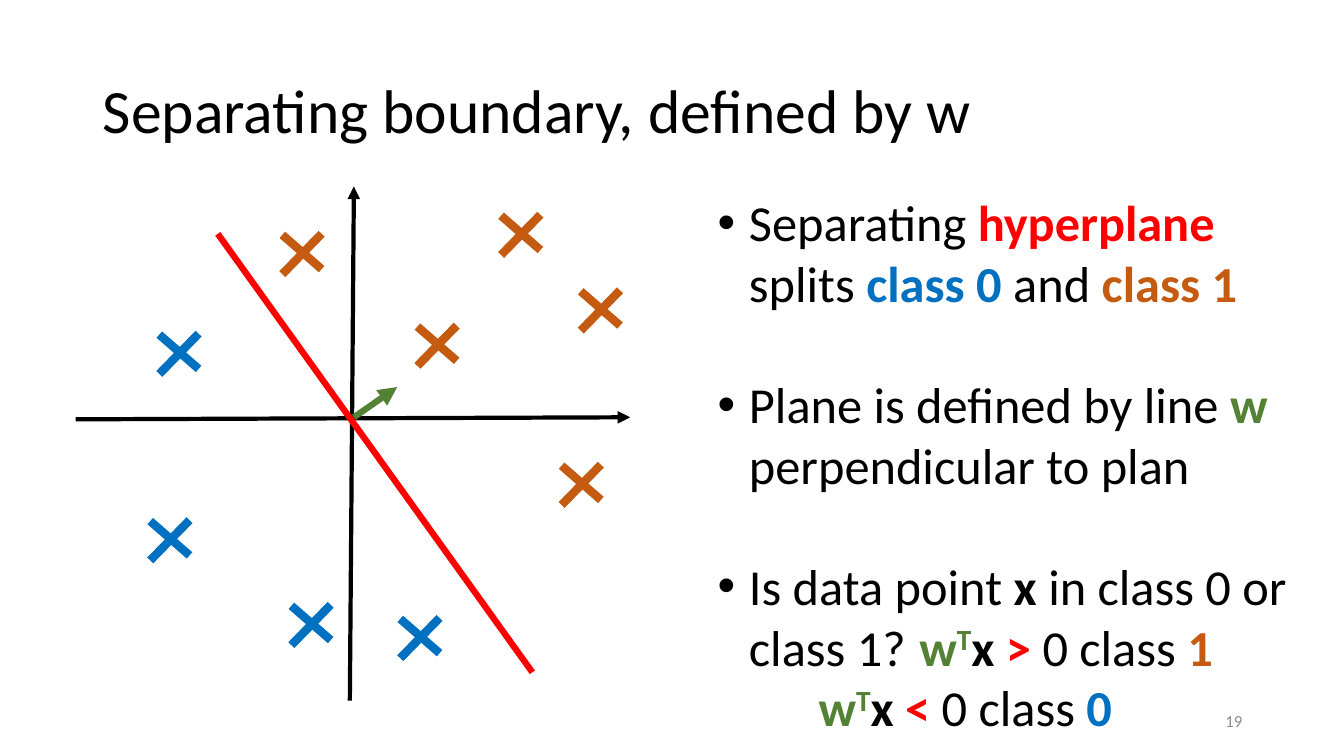
"""Build a slide on the line that splits two classes."""
from dataclasses import dataclass

from lxml import etree
from pptx import Presentation
from pptx.dml.color import RGBColor
from pptx.enum import shapes, text
from pptx.oxml.ns import qn
from pptx.util import Inches, Pt

BLACK, RED, BLUE = "000000", "FF0000", "0070C0"
ORANGE, GREEN, GRAY = "C55A11", "548235", "8C8C8C"
FONT = "Calibri"


@dataclass(frozen=True)
class Line:
    x1: float
    y1: float
    x2: float
    y2: float
    color: str
    width: float
    arrow: bool = False


@dataclass(frozen=True)
class Cross:
    left: float
    top: float
    color: str


@dataclass(frozen=True)
class Span:
    words: str
    color: str = BLACK
    bold: bool = False
    raised: bool = False


AXES = [
    Line(3.47, 6.95, 3.51, 1.85, BLACK, 3, True),
    Line(0.75, 4.16, 6.25, 4.14, BLACK, 3, True),
]
PLANE = Line(2.16, 2.32, 5.28, 6.67, RED, 4.5)
NORMAL = Line(3.51, 4.14, 3.94, 3.84, GREEN, 4.5, True)

POINTS = [
    Cross(4.14, 3.23, ORANGE), Cross(2.8, 2.32, ORANGE),
    Cross(5.76, 2.88, ORANGE), Cross(5.57, 4.61, ORANGE),
    Cross(4.97, 2.13, ORANGE),
    Cross(1.58, 3.31, BLUE), Cross(1.49, 5.16, BLUE),
    Cross(2.89, 6, BLUE), Cross(3.97, 6.13, BLUE),
]


def rule(sign: str, label: str, color: str) -> list[Span]:
    """Give the spans of one class test."""
    return [
        Span("w", GREEN, True), Span("T", GREEN, True, True),
        Span("x ", bold=True), Span(sign, RED, True),
        Span(" 0 class "), Span(label, color, True),
    ]


BULLETS = [
    [Span("Separating "), Span("hyperplane", RED, True), Span(" splits "),
     Span("class 0", BLUE, True), Span(" and "), Span("class 1", ORANGE, True)],
    [Span("Plane is defined by line "), Span("w ", GREEN, True),
     Span("perpendicular to plan")],
    [Span("Is data point "), Span("x", bold=True),
     Span(" in class 0 or class 1?\t"), *rule(">", "1", ORANGE),
     Span("\n\t\t"), *rule("<", "0", BLUE)],
]


def paint(color: str) -> RGBColor:
    return RGBColor.from_string(color)


def write(para, words: str, *, size: float, color: str = BLACK,
          bold: bool = False, raised: bool = False) -> None:
    if words.startswith("\n"):
        para.add_line_break()
        words = words[1:]
    run = para.add_run()
    run.text = words
    font = run.font
    font.name, font.size, font.bold = FONT, Pt(size), bold
    font.color.rgb = paint(color)
    if raised:
        run._r.get_or_add_rPr().set("baseline", "30000")


def draw_line(slide, line: Line) -> None:
    ends = map(Inches, (line.x1, line.y1, line.x2, line.y2))
    shape = slide.shapes.add_connector(shapes.MSO_CONNECTOR.STRAIGHT, *ends)
    shape.line.color.rgb = paint(line.color)
    shape.line.width = Pt(line.width)
    if line.arrow:
        etree.SubElement(shape.line._get_or_add_ln(), qn("a:tailEnd"), type="triangle")
    etree.SubElement(shape._element.spPr, qn("a:effectLst"))


def draw_cross(slide, cross: Cross) -> None:
    left, top, right = cross.left, cross.top, cross.left + 0.39
    for start, end in ((0.01, 0.35), (0.4, 0)):
        draw_line(slide, Line(left, top + start, right, top + end, cross.color, 6))


def place(shape, left: float, top: float, width: float, height: float) -> None:
    shape.left, shape.top = Inches(left), Inches(top)
    shape.width, shape.height = Inches(width), Inches(height)


def add_title(slide) -> None:
    title = slide.shapes.title
    place(title, 0.92, 0.4, 11.5, 1.45)
    frame = title.text_frame
    frame.vertical_anchor = text.MSO_ANCHOR.MIDDLE
    frame.auto_size = text.MSO_AUTO_SIZE.NONE
    para = frame.paragraphs[0]
    para.alignment = text.PP_ALIGN.LEFT
    para.line_spacing = 0.9
    write(para, "Separating boundary, defined by w", size=44)


def add_box(slide, left: float, top: float, width: float, height: float):
    box = slide.shapes.add_textbox(*map(Inches, (left, top, width, height)))
    box.text_frame.word_wrap = True
    return box.text_frame


def add_page(slide) -> None:
    frame = add_box(slide, 9.42, 6.95, 3, 0.4)
    frame.vertical_anchor = text.MSO_ANCHOR.MIDDLE
    frame.paragraphs[0].alignment = text.PP_ALIGN.RIGHT
    write(frame.paragraphs[0], "19", size=12, color=GRAY)


def add_list(slide) -> None:
    frame = add_box(slide, 7.02, 1.85, 5.88, 5.55)
    for place_no, spans in enumerate(BULLETS):
        para = frame.add_paragraph() if place_no else frame.paragraphs[0]
        if place_no:
            para.space_before = Pt(43.5)
        props = para._p.get_or_add_pPr()
        props.set("marL", str(Inches(0.31)))
        props.set("indent", str(Inches(-0.31)))
        etree.SubElement(props, qn("a:buFont"), typeface="Arial")
        etree.SubElement(props, qn("a:buChar"), char="•")
        for span in spans:
            write(para, span.words, size=36, color=span.color,
                  bold=span.bold, raised=span.raised)


def main() -> None:
    deck = Presentation()
    deck.slide_width, deck.slide_height = Inches(13.33), Inches(7.5)
    slide = deck.slides.add_slide(deck.slide_layouts.get_by_name("Title Only"))
    add_title(slide)
    add_page(slide)
    for axis in AXES:
        draw_line(slide, axis)
    for point in POINTS:
        draw_cross(slide, point)
    draw_line(slide, PLANE)
    draw_line(slide, NORMAL)
    add_list(slide)
    deck.save("out.pptx")


if __name__ == "__main__":
    main()
